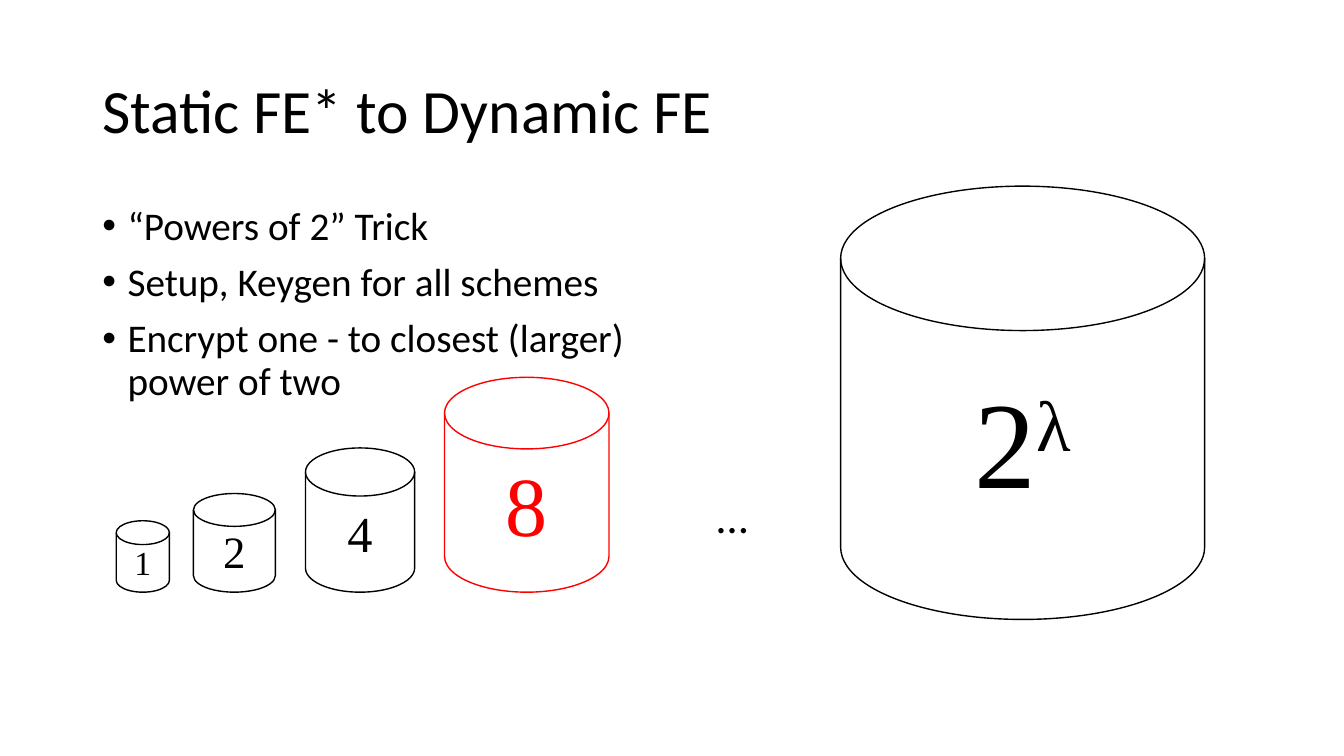
from pptx import Presentation
from pptx.dml.color import RGBColor
from pptx.enum.shapes import MSO_SHAPE
from pptx.enum.text import MSO_ANCHOR, PP_ALIGN
from pptx.oxml.ns import qn
from pptx.util import Pt
from lxml import etree

DISK = MSO_SHAPE.FLOWCHART_MAGNETIC_DISK
MIDDLE = MSO_ANCHOR.MIDDLE
CENTER = PP_ALIGN.CENTER

COLORS = {"ink": "000000", "paper": "FFFFFF", "chosen": "FF0000"}
SANS = "Calibri"
SERIF = "Times New Roman"
POINTS = [
    "“Powers of 2” Trick",
    "Setup, Keygen for all schemes",
    "Encrypt one - to closest (larger) power of two",
]
ROW_BOTTOM = 423
SMALL_DISKS = [
    ("1", 83, 38, 51, 24, "ink"),
    ("2", 138.2, 58.5, 70.5, 32, "ink"),
    ("4", 218.2, 78, 103, 36, "ink"),
    ("8", 317.5, 117.5, 153.5, 60, "chosen"),
]


def rgb(name):
    return RGBColor.from_string(COLORS[name])


def style(para, face, size, color):
    para.font.name = face
    para.font.size = Pt(size)
    para.font.color.rgb = rgb(color)


def add_text_frame(page, box):
    frame = page.shapes.add_textbox(*map(Pt, box)).text_frame
    frame.word_wrap = True
    return frame


def add_line(page, box, text, size, anchor=None):
    frame = add_text_frame(page, box)
    frame.vertical_anchor = anchor
    para = frame.paragraphs[0]
    para.text = text
    para.line_spacing = 0.9 if anchor else None
    style(para, SANS, size, "ink")


def add_bullets(page, box, lines):
    frame = add_text_frame(page, box)
    for index, line in enumerate(lines):
        para = frame.add_paragraph() if index else frame.paragraphs[0]
        para.text = line
        para.line_spacing = 0.9
        para.space_before = Pt(10)
        style(para, SANS, 28, "ink")
        props = para._p.get_or_add_pPr()
        props.set("marL", str(Pt(18)))
        props.set("indent", str(-Pt(18)))
        font = etree.Element(qn("a:buFont"), typeface="Arial")
        bullet = etree.Element(qn("a:buChar"), char="•")
        defaults = props.find(qn("a:defRPr"))
        defaults.addprevious(font)
        defaults.addprevious(bullet)


def add_disk(page, box, base, size, color, exponent=""):
    disk = page.shapes.add_shape(DISK, *map(Pt, box))
    disk.shadow.inherit = False
    disk.fill.solid()
    disk.fill.fore_color.rgb = rgb("paper")
    disk.line.color.rgb = rgb(color)
    disk.line.width = Pt(1)
    disk.text_frame.vertical_anchor = MIDDLE
    para = disk.text_frame.paragraphs[0]
    para.alignment = CENTER
    style(para, SERIF, size, color)
    para.add_run().text = base
    if exponent:
        span = para.add_run()
        span.text = exponent
        span._r.get_or_add_rPr().set("baseline", "30000")


def add_disk_row(page, bottom, disks):
    for label, left, width, height, size, color in disks:
        add_disk(page, (left, bottom - height, width, height), label, size, color)


def main():
    deck = Presentation()
    deck.slide_width = Pt(960)
    deck.slide_height = Pt(540)
    page = deck.slides.add_slide(deck.slide_layouts[6])
    add_line(page, (66, 28.75, 828, 104.5), "Static FE* to Dynamic FE", 44, MIDDLE)
    add_bullets(page, (66, 143.75, 422, 342.5), POINTS)
    add_disk_row(page, ROW_BOTTOM, SMALL_DISKS)
    add_disk(page, (600.5, 133, 260, 309.5), "2", 88, "ink", "λ")
    add_line(page, (505, 345.5, 110, 85), "…", 32)
    deck.save("out.pptx")


if __name__ == "__main__":
    main()
